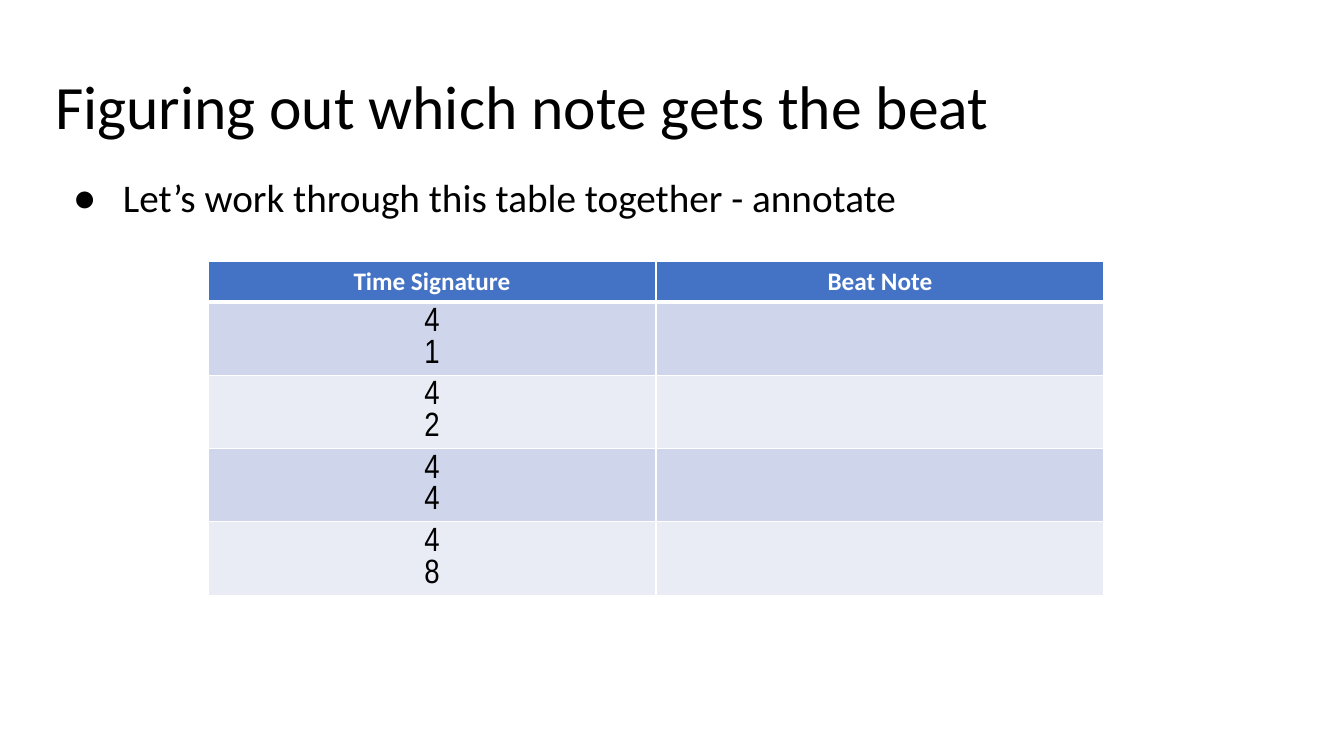
from lxml import etree
from pptx import Presentation, util as u
from pptx.dml.color import RGBColor
from pptx.enum import text as t
from pptx.oxml.ns import qn

# Content
TITLE = "Figuring out which note gets the beat"
TASK = "Let’s work through this table together - annotate"
HEADS = ["Time Signature", "Beat Note"]
METERS = [("4", "1"), ("4", "2"), ("4", "4"), ("4", "8")]

# Look
HEX = {"ink": "000000", "white": "FFFFFF", "head": "4472C4",
       "dark": "CFD5EA", "light": "E9EBF5"}
PX = 914400 / 100.8
LEFT, WIDE, PAD = 45, 1252, 10
GRID_X, GRID_Y, COL_W, HEAD_H, ROW_H = 208, 261, 448, 41, 73


def px(n):
    return u.Emu(round(n * PX))


def write(frame, lines, size, face="Calibri", color="ink", bold=False,
          align=t.PP_ALIGN.LEFT, space=None, bullet=None):
    for i, line in enumerate(lines):
        para = frame.paragraphs[0] if i == 0 else frame.add_paragraph()
        para.alignment = align
        if space:
            para.line_spacing = space
        if bullet:
            props = para._p.get_or_add_pPr()
            props.set("marL", str(px(68)))
            props.set("indent", str(px(-50)))
            etree.SubElement(props, qn("a:buFont")).set("typeface", "Arial")
            etree.SubElement(props, qn("a:buChar")).set("char", bullet)
        run = para.add_run()
        run.text = line
        font = run.font
        font.name, font.size, font.bold = face, u.Pt(size), bold
        font.color.rgb = RGBColor.from_string(HEX[color])


def place(shape, top, high):
    shape.left, shape.top = px(LEFT), px(top)
    shape.width, shape.height = px(WIDE), px(high)
    frame = shape.text_frame
    frame.word_wrap = True
    frame.auto_size = t.MSO_AUTO_SIZE.NONE
    frame.vertical_anchor = t.MSO_ANCHOR.TOP
    frame.margin_left = frame.margin_right = px(PAD)
    frame.margin_top = frame.margin_bottom = px(PAD)
    return frame


def paint(cell, fill, base=1):
    # Borders come before the fill in the cell's properties
    props = cell._tc.get_or_add_tcPr()
    for side, wide in (("L", 1), ("R", 1), ("T", 1), ("B", base)):
        edge = etree.SubElement(props, qn("a:ln" + side), w=str(u.Pt(wide)))
        solid = etree.SubElement(edge, qn("a:solidFill"))
        etree.SubElement(solid, qn("a:srgbClr"), val=HEX["white"])
    cell.fill.solid()
    cell.fill.fore_color.rgb = RGBColor.from_string(HEX[fill])


prs = Presentation()
prs.slide_width, prs.slide_height = px(1344), px(756)
slide = prs.slides.add_slide(prs.slide_layouts[5])

# Title and task
write(place(slide.shapes.title, 66, 85), [TITLE], 44, space=0.9)
box = slide.shapes.add_textbox(0, 0, px(WIDE), px(502))
write(place(box, 169, 502), [TASK], 28, space=0.9, bullet="●")

# Table of time signatures
grid = slide.shapes.add_table(
    len(METERS) + 1, len(HEADS), px(GRID_X), px(GRID_Y),
    px(COL_W * len(HEADS)), px(HEAD_H + ROW_H * len(METERS))).table
for col, head in enumerate(HEADS):
    grid.columns[col].width = px(COL_W)
    cell = grid.cell(0, col)
    paint(cell, "head", base=3)
    write(cell.text_frame, [head], 18, color="white", bold=True,
          align=t.PP_ALIGN.CENTER)
grid.rows[0].height = px(HEAD_H)
for row, meter in enumerate(METERS, 1):
    grid.rows[row].height = px(ROW_H)
    for col in range(len(HEADS)):
        paint(grid.cell(row, col), "dark" if row % 2 else "light")
    write(grid.cell(row, 0).text_frame, meter, 24, face="Arial Narrow",
          align=t.PP_ALIGN.CENTER)

prs.save("out.pptx")
